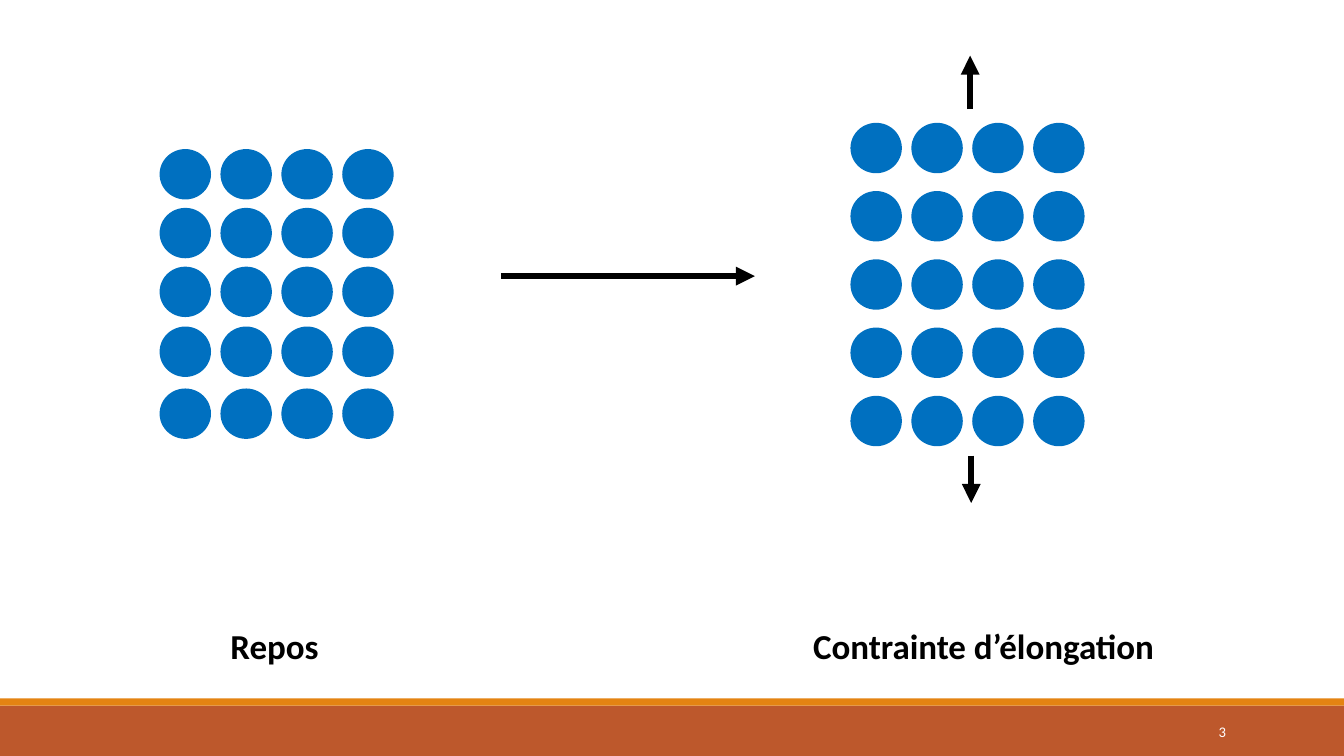
from dataclasses import dataclass

from lxml import etree
from pptx import Presentation
from pptx.dml.color import RGBColor
from pptx.enum.shapes import MSO_CONNECTOR, MSO_SHAPE
from pptx.enum.text import MSO_ANCHOR, PP_ALIGN
from pptx.oxml.ns import qn
from pptx.util import Pt

RECTANGLE, OVAL = MSO_SHAPE.RECTANGLE, MSO_SHAPE.OVAL
STRAIGHT = MSO_CONNECTOR.STRAIGHT
TOP, MIDDLE = MSO_ANCHOR.TOP, MSO_ANCHOR.MIDDLE
LEFT, RIGHT = PP_ALIGN.LEFT, PP_ALIGN.RIGHT
PX = 9525  # EMU per px, 96 px to the inch


@dataclass
class Theme:
    font: str = "Calibri"
    label_size: float = 25
    number_size: float = 10.5
    arrow_width: float = 4.5
    ink: str = "000000"
    white: str = "FFFFFF"
    atom: str = "0070C0"
    footer: str = "BD582C"
    stripe: str = "E48312"


theme = Theme()


def add_text(page, text, *, left, top, width, height, size, color,
             bold=False, align=LEFT, anchor=TOP):
    box = page.shapes.add_textbox(left * PX, top * PX, width * PX, height * PX)
    frame = box.text_frame
    frame.word_wrap = True
    frame.vertical_anchor = anchor
    para = frame.paragraphs[0]
    para.alignment = align
    span = para.add_run()
    span.text = text
    span.font.name = theme.font
    span.font.size = Pt(size)
    span.font.bold = bold
    span.font.color.rgb = RGBColor.from_string(color)


def add_solid(shapes, kind, left, top, width, height, color):
    shape = shapes.add_shape(kind, left * PX, top * PX, width * PX, height * PX)
    shape.shadow.inherit = False
    shape.fill.solid()
    shape.fill.fore_color.rgb = RGBColor.from_string(color)
    shape.line.fill.background()


deck = Presentation()
deck.slide_width, deck.slide_height = 1280 * PX, 720 * PX
page = deck.slides.add_slide(deck.slide_layouts[6])

# Footer bands and page number
add_solid(page.shapes, RECTANGLE, 0, 672, 1280, 48, theme.footer)
add_solid(page.shapes, RECTANGLE, 0, 665, 1280, 7, theme.stripe)
add_text(page, "3", left=1040, top=678, width=137, height=38,
         size=theme.number_size, color=theme.white, align=RIGHT, anchor=MIDDLE)

# Atom lattices: at rest, then stretched vertically
COLUMNS, COLUMN_PITCH = 4, 58
rest_rows = [142, 198, 254, 311, 370]
stretched_rows = [117 + 65 * row for row in range(5)]
for lattice_left, row_tops in ((152, rest_rows), (810, stretched_rows)):
    lattice = page.shapes.add_group_shape()
    for top in row_tops:
        for column in range(COLUMNS):
            add_solid(lattice.shapes, OVAL, lattice_left + column * COLUMN_PITCH,
                      top, 49, 48, theme.atom)

# Labels
for label, left, width in (("Repos", 210, 351), ("Contrainte d’élongation", 765, 420)):
    add_text(page, label, left=left, top=590, width=width, height=50,
             size=theme.label_size, color=theme.ink, bold=True)

# Arrows: transition, upward pull, downward pull
for ends in ((477, 263, 719, 263), (924, 104, 924, 53), (925, 434, 925, 479)):
    arrow = page.shapes.add_connector(STRAIGHT, *(end * PX for end in ends))
    arrow.line.width = Pt(theme.arrow_width)
    arrow.line.color.rgb = RGBColor.from_string(theme.ink)
    etree.SubElement(arrow.line._get_or_add_ln(), qn("a:tailEnd"), type="triangle")
    etree.SubElement(arrow._element.spPr, qn("a:effectLst"))

deck.save("out.pptx")
